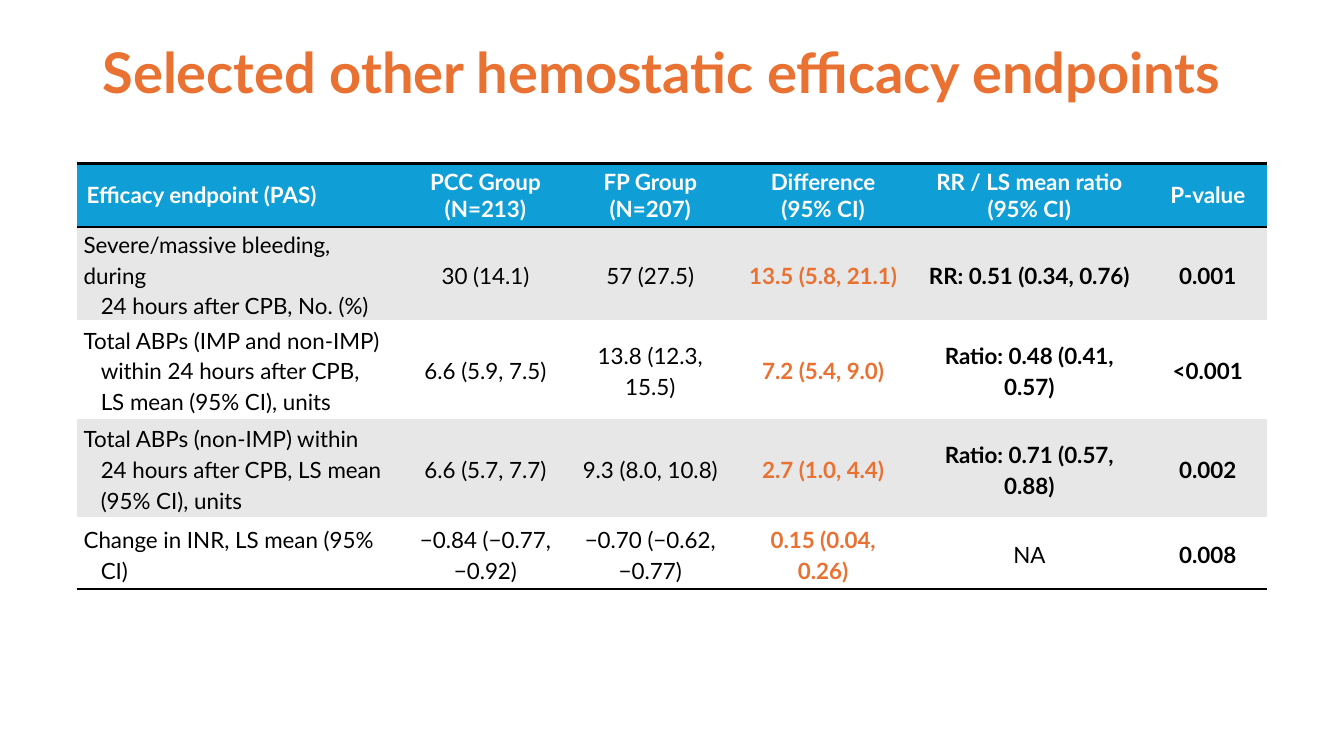
from lxml import etree
from pptx import Presentation
from pptx.dml.color import RGBColor
from pptx.enum.text import MSO_ANCHOR, PP_ALIGN
from pptx.oxml.ns import qn
from pptx.util import Inches, Pt

LEFT, CENTER = PP_ALIGN.LEFT, PP_ALIGN.CENTER
TOP, MIDDLE = MSO_ANCHOR.TOP, MSO_ANCHOR.MIDDLE
FONT = "Lato"
ORANGE, BLUE, GREY, WHITE, BLACK = "E97132", "0F9ED5", "E7E7E7", "FFFFFF", "000000"
NO_GRID_STYLE = "{2D5ABB26-0587-4C30-8999-92F81FD0307C}"
DIFFERENCE, RATIO, P_VALUE = 3, 4, 5


def style(paragraph, size, color, bold):
    for run in paragraph.runs:
        run.font.name = FONT
        run.font.size = Pt(size)
        run.font.bold = bold
        run.font.color.rgb = RGBColor.from_string(color)


def add_rule(cell, side):
    rule = etree.Element(qn(f"a:{side}"), w=str(Pt(2)))
    fill = etree.SubElement(rule, qn("a:solidFill"))
    etree.SubElement(fill, qn("a:srgbClr"), val=BLACK)
    cell._tc.get_or_add_tcPr().insert(0, rule)


prs = Presentation()
prs.slide_width, prs.slide_height = Inches(13.33), Inches(7.5)
slide = prs.slides.add_slide(prs.slide_layouts[6])

title = slide.shapes.add_textbox(
    Inches(0.92), Inches(0.4), Inches(11.5), Inches(1.45)).text_frame
title.word_wrap = True
title.vertical_anchor = TOP
title.text = "Selected other hemostatic efficacy endpoints"
title.paragraphs[0].line_spacing = 0.9
style(title.paragraphs[0], 40, ORANGE, True)

endpoints = [
    ["Efficacy endpoint (PAS)", "PCC Group (N=213)", "FP Group (N=207)",
     "Difference (95% CI)", "RR / LS mean ratio (95% CI)", "P-value"],
    ["Severe/massive bleeding, during\n24 hours after CPB, No. (%)",
     "30 (14.1)", "57 (27.5)", "13.5 (5.8, 21.1)", "RR: 0.51 (0.34, 0.76)", "0.001"],
    ["Total ABPs (IMP and non-IMP)\nwithin 24 hours after CPB,\nLS mean (95% CI), units",
     "6.6 (5.9, 7.5)", "13.8 (12.3, 15.5)", "7.2 (5.4, 9.0)",
     "Ratio: 0.48 (0.41, 0.57)", "<0.001"],
    ["Total ABPs (non-IMP) within\n24 hours after CPB, LS mean\n(95% CI), units",
     "6.6 (5.7, 7.7)", "9.3 (8.0, 10.8)", "2.7 (1.0, 4.4)",
     "Ratio: 0.71 (0.57, 0.88)", "0.002"],
    ["Change in INR, LS mean (95%\nCI)", "−0.84 (−0.77, −0.92)", "−0.70 (−0.62, −0.77)",
     "0.15 (0.04, 0.26)", "NA", "0.008"],
]
column_widths = [3.27, 1.57, 1.7, 1.73, 2.36, 1.18]
row_heights = [0.43, 0.71, 0.98, 0.98, 0.71]

results = slide.shapes.add_table(
    len(row_heights), len(column_widths), Inches(0.76), Inches(1.62),
    Inches(sum(column_widths)), Inches(sum(row_heights))).table
results.horz_banding = False
results._tbl.tblPr.find(qn("a:tableStyleId")).text = NO_GRID_STYLE
for column, width in zip(results.columns, column_widths):
    column.width = Inches(width)
for row, height in zip(results.rows, row_heights):
    row.height = Inches(height)

for r, entries in enumerate(endpoints):
    is_header = r == 0
    for c, entry in enumerate(entries):
        cell = results.cell(r, c)
        cell.text_frame.text = entry
        cell.vertical_anchor = MIDDLE
        cell.fill.solid()
        cell.fill.fore_color.rgb = RGBColor.from_string(
            BLUE if is_header else GREY if r % 2 else WHITE)
        if is_header or r == len(endpoints) - 1:
            add_rule(cell, "lnB")
        if is_header:
            add_rule(cell, "lnT")
        else:
            cell.margin_left = Inches(0.07)
            cell.margin_right = Inches(0.07 if c else 0.1)
            cell.margin_top = cell.margin_bottom = 0

        color = WHITE if is_header else ORANGE if c == DIFFERENCE else BLACK
        bold = is_header or c in (DIFFERENCE, RATIO, P_VALUE) and entry != "NA"
        lines = cell.text_frame.paragraphs
        for line in lines:
            line.alignment = CENTER if c else LEFT
            if not is_header:
                line.line_spacing = 1.15
            style(line, 16, color, bold)
        for continuation in lines[1:]:
            continuation._p.get_or_add_pPr().set("marL", str(Inches(0.17)))
        if not is_header:
            lines[-1].space_after = Pt(10)

prs.save("out.pptx")
